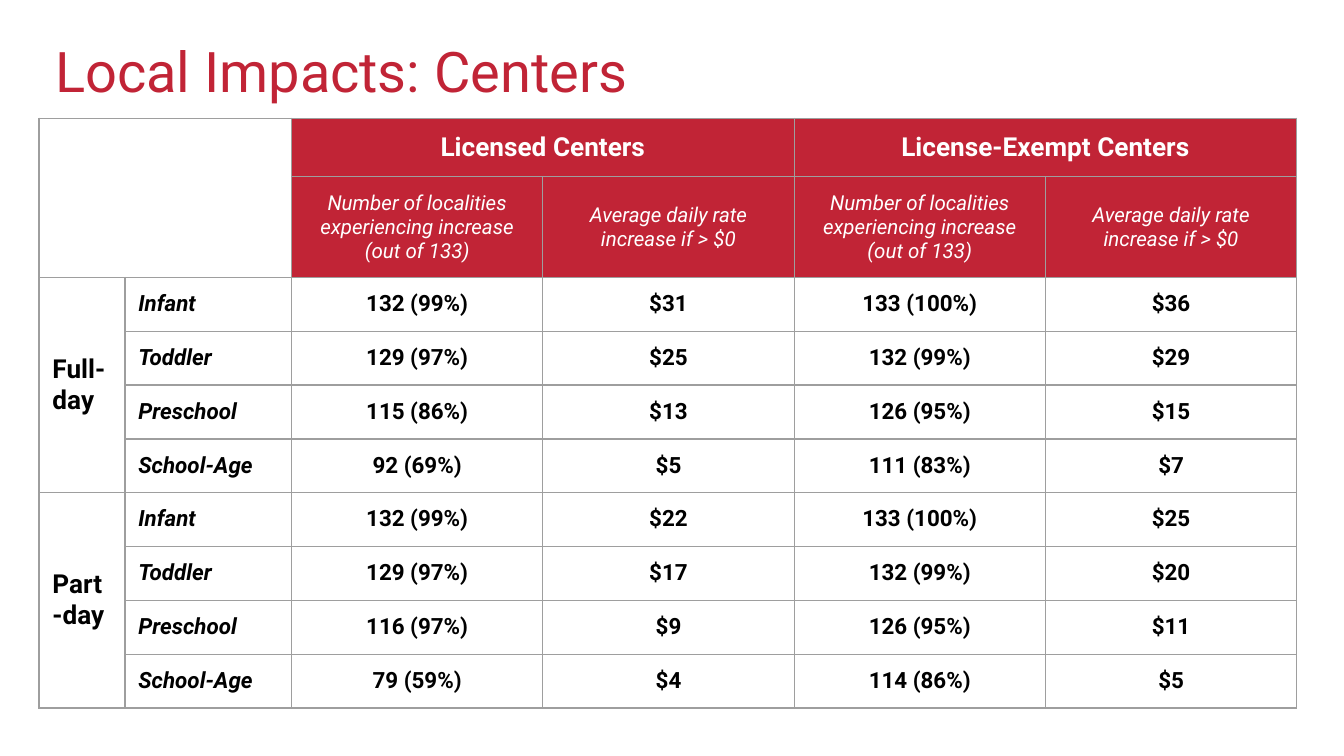
import pptx
import pptx.util
import pptx.dml.color
import pptx.enum.text
import pptx.oxml
import pptx.oxml.ns

Inches, Pt = pptx.util.Inches, pptx.util.Pt
CENTER = pptx.enum.text.PP_ALIGN.CENTER
LEFT = pptx.enum.text.PP_ALIGN.LEFT
MIDDLE = pptx.enum.text.MSO_ANCHOR.MIDDLE
TOP = pptx.enum.text.MSO_ANCHOR.TOP

# Content
TITLE = "Local Impacts: Centers"
CENTER_TYPES = ["Licensed Centers", "License-Exempt Centers"]
MEASURES = [
    "Number of localities experiencing increase (out of 133)",
    "Average daily rate increase if > $0",
]
SESSIONS = {
    "Full-day": [
        ("Infant", "132 (99%)", "$31", "133 (100%)", "$36"),
        ("Toddler", "129 (97%)", "$25", "132 (99%)", "$29"),
        ("Preschool", "115 (86%)", "$13", "126 (95%)", "$15"),
        ("School-Age", "92 (69%)", "$5", "111 (83%)", "$7"),
    ],
    "Part-day": [
        ("Infant", "132 (99%)", "$22", "133 (100%)", "$25"),
        ("Toddler", "129 (97%)", "$17", "132 (99%)", "$20"),
        ("Preschool", "116 (97%)", "$9", "126 (95%)", "$11"),
        ("School-Age", "79 (59%)", "$4", "114 (86%)", "$5"),
    ],
}

# Formats
RED, WHITE, BLACK, GRAY = "C12436", "FFFFFF", "000000", "9E9E9E"
COLUMN_WIDTHS = [0.64, 1.24] + [1.87] * 4
ROW_HEIGHTS = [0.43, 0.66] + [0.4] * 8
TITLE_FONT = {"size": Pt(30)}
GROUP_FONT = {"size": Pt(14), "bold": True, "italic": False}
MEASURE_FONT = {"size": Pt(11), "bold": False, "italic": True}
AGE_FONT = {"size": Pt(12), "bold": True, "italic": True}
VALUE_FONT = {"size": Pt(12), "bold": True, "italic": False}


def color(value):
    return pptx.dml.color.RGBColor.from_string(value)


def write(frame, text, font, text_color, alignment=LEFT):
    paragraph = frame.paragraphs[0]
    paragraph.alignment = alignment
    run = paragraph.add_run()
    run.text = text
    for name, value in {"name": "Roboto", **font}.items():
        setattr(run.font, name, value)
    run.font.color.rgb = color(text_color)
    return paragraph


def fill_cell(cell, text, font, text_color=BLACK, alignment=CENTER, anchor=TOP, fill=None):
    write(cell.text_frame, text, font, text_color, alignment)
    cell.vertical_anchor = anchor
    if fill:
        cell.fill.solid()
        cell.fill.fore_color.rgb = color(fill)


def add_borders(cell):
    properties = cell._tc.get_or_add_tcPr()
    for index, side in enumerate(("lnL", "lnR", "lnT", "lnB")):
        line = pptx.oxml.parse_xml(
            f'<a:{side} {pptx.oxml.ns.nsdecls("a")} w="{Pt(0.75)}">'
            f'<a:solidFill><a:srgbClr val="{GRAY}"/></a:solidFill></a:{side}>'
        )
        properties.insert(index, line)


# Widescreen slide, 16:9
presentation = pptx.Presentation()
presentation.slide_width = Inches(10)
presentation.slide_height = presentation.slide_width * 9 // 16
slide = presentation.slides.add_slide(presentation.slide_layouts[6])

# Title
title = slide.shapes.add_textbox(Inches(0.34), Inches(0.24), Inches(9.32), Inches(0.63))
frame_format = {
    "word_wrap": True, "vertical_anchor": MIDDLE,
    "margin_left": Inches(0.07), "margin_right": Inches(0.07),
    "margin_top": Inches(0.04), "margin_bottom": Inches(0.04),
}
for name, value in frame_format.items():
    setattr(title.text_frame, name, value)
write(title.text_frame, TITLE, TITLE_FONT, RED).line_spacing = 0.9

# Table grid
table = slide.shapes.add_table(
    len(ROW_HEIGHTS), len(COLUMN_WIDTHS), Inches(0.29), Inches(0.88),
    Inches(sum(COLUMN_WIDTHS)), Inches(sum(ROW_HEIGHTS)),
).table
table.first_row = table.horz_banding = False
for column, width in zip(table.columns, COLUMN_WIDTHS):
    column.width = Inches(width)
for row, height in zip(table.rows, ROW_HEIGHTS):
    row.height = Inches(height)
for cell in table.iter_cells():
    for side in ("left", "right", "top", "bottom"):
        setattr(cell, f"margin_{side}", Inches(0.1))
    cell.fill.background()
    add_borders(cell)

# Header rows
table.cell(0, 0).merge(table.cell(1, 1))
for group, center_type in enumerate(CENTER_TYPES):
    first = 2 + group * len(MEASURES)
    table.cell(0, first).merge(table.cell(0, first + len(MEASURES) - 1))
    fill_cell(table.cell(0, first), center_type, GROUP_FONT, WHITE, fill=RED)
    for offset, measure in enumerate(MEASURES):
        fill_cell(table.cell(1, first + offset), measure, MEASURE_FONT, WHITE,
                  anchor=MIDDLE, fill=RED)

# Body rows
top = 2
for session, records in SESSIONS.items():
    table.cell(top, 0).merge(table.cell(top + len(records) - 1, 0))
    fill_cell(table.cell(top, 0), session, GROUP_FONT, alignment=LEFT, anchor=MIDDLE)
    for row_index, (age, *values) in enumerate(records, top):
        fill_cell(table.cell(row_index, 1), age, AGE_FONT, alignment=LEFT)
        for column_index, value in enumerate(values, 2):
            fill_cell(table.cell(row_index, column_index), value, VALUE_FONT)
    top += len(records)

presentation.save("out.pptx")
